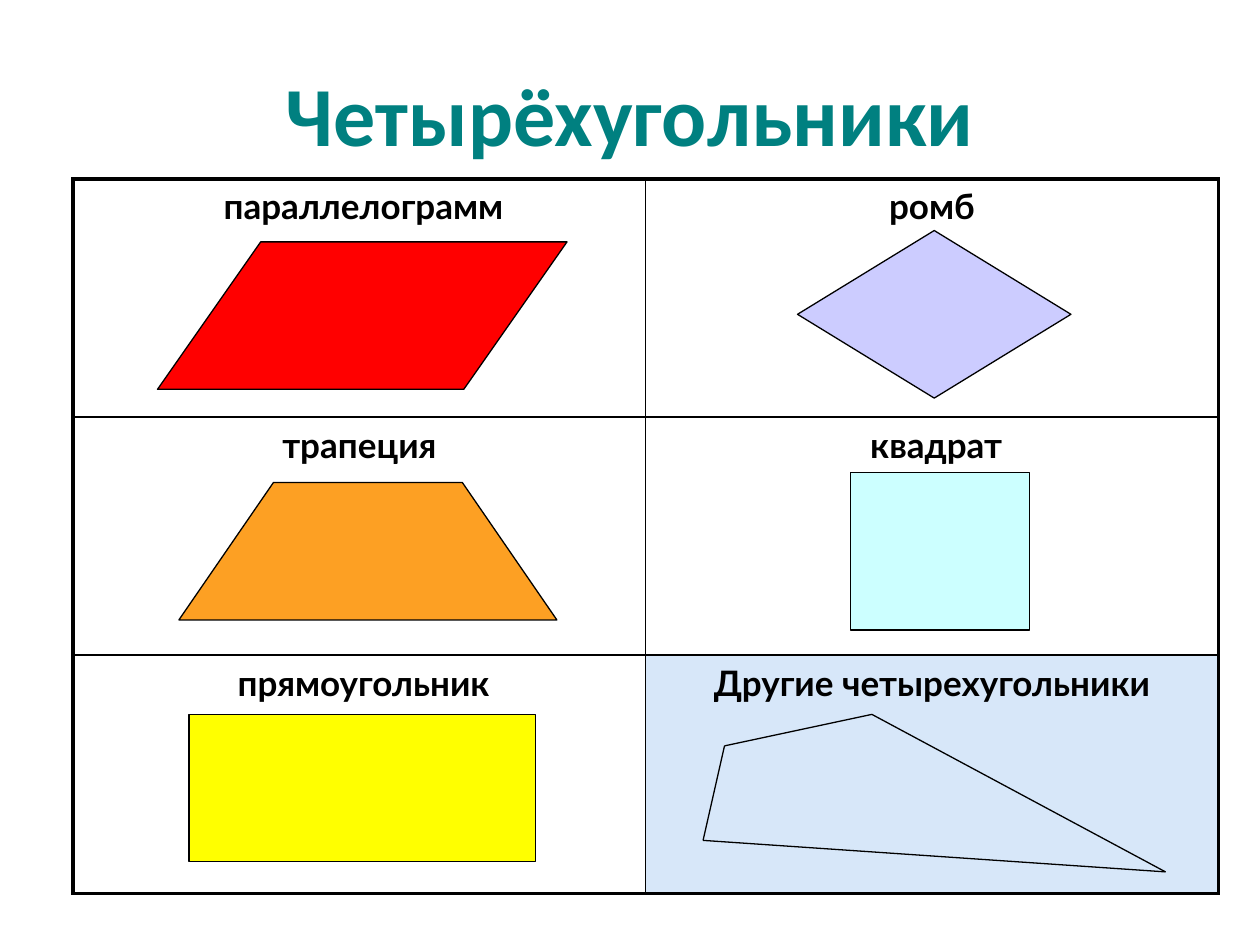
from lxml import etree
from pptx import Presentation
from pptx.dml.color import RGBColor
from pptx.enum.shapes import MSO_CONNECTOR, MSO_SHAPE
from pptx.enum.text import MSO_ANCHOR, PP_ALIGN
from pptx.oxml.ns import qn
from pptx.util import Inches, Pt

LINE = MSO_CONNECTOR.STRAIGHT
SLANT = MSO_SHAPE.PARALLELOGRAM
RECT = MSO_SHAPE.RECTANGLE
DIAMOND = MSO_SHAPE.DIAMOND
CENTER = PP_ALIGN.CENTER
MIDDLE = MSO_ANCHOR.MIDDLE

TITLE = "Четырёхугольники"
NAMES = [
    (" параллелограмм", "ромб"),
    ("трапеция", " квадрат"),
    (" прямоугольник", "Другие четырехугольники"),
]
TINTS = {"Другие четырехугольники": "D7E7F9"}
FIGURES = [
    (SLANT, (1.25, 1.92, 3.25, 1.17), "FF0000"),
    (RECT, (1.5, 5.67, 2.75, 1.17), "FFFF00"),
    (DIAMOND, (6.33, 1.83, 2.17, 1.33), "CCCCFF"),
    (RECT, (6.75, 3.75, 1.42, 1.25), "CCFFFF"),
]
TRAPEZOID = [(4.42, 4.92), (3.67, 3.83), (2.17, 3.83), (1.42, 4.92)]
OTHER = [(5.58, 6.67), (5.75, 5.92), (6.92, 5.67), (9.25, 6.92)]
BLACK = "000000"
THICK, THIN, EDGE = 2.25, 1, 0.75


def color(code):
    """Turn a hex string into a colour."""
    return RGBColor.from_string(code)


def style(part, size, face, code):
    """Centre a paragraph and set its bold font."""
    part.alignment = CENTER
    font = part.font
    font.size, font.name, font.bold = Pt(size), face, True
    font.color.rgb = color(code)


def outline(shape):
    """Give a shape or connector a thin black line."""
    shape.line.color.rgb = color(BLACK)
    shape.line.width = Pt(EDGE)


def paint(shape, code):
    """Fill and outline a shape without a shadow."""
    shape.shadow.inherit = False
    shape.fill.solid()
    shape.fill.fore_color.rgb = color(code)
    outline(shape)


def border(cell, widths):
    """Draw the four borders of a cell ahead of its fill."""
    props = cell._tc.get_or_add_tcPr()
    for spot, (side, width) in enumerate(zip("LRTB", widths)):
        line = etree.Element(qn(f"a:ln{side}"), w=str(Pt(width)))
        fill = etree.SubElement(line, qn("a:solidFill"))
        etree.SubElement(fill, qn("a:srgbClr"), val=BLACK)
        props.insert(spot, line)


def add_grid(shapes):
    """Add the table of names with a thick outer frame."""
    rows, cols = len(NAMES), len(NAMES[0])
    box = [Inches(n) for n in (0.58, 1.42, 9.09, 5.67)]
    table = shapes.add_table(rows, cols, *box).table
    table.first_row = table.horz_banding = False
    for r, names in enumerate(NAMES):
        for c, name in enumerate(names):
            cell = table.cell(r, c)
            cell.text = name
            part = cell.text_frame.paragraphs[0]
            style(part, 20, "Lato", BLACK)
            part.space_before = Pt(4)
            if name in TINTS:
                cell.fill.solid()
                cell.fill.fore_color.rgb = color(TINTS[name])
            else:
                cell.fill.background()
            outer = (c == 0, c == cols - 1, r == 0, r == rows - 1)
            border(cell, [THICK if out else THIN for out in outer])


def add_sides(shapes, points):
    """Join the points into a closed outline of connectors."""
    for start, end in zip(points, points[1:] + points[:1]):
        side = shapes.add_connector(LINE, *[Inches(n) for n in start + end])
        outline(side)
        etree.SubElement(side._element.spPr, qn("a:effectLst"))


def main():
    """Build the slide and save it."""
    deck = Presentation()
    deck.slide_width, deck.slide_height = Inches(10), Inches(7.5)
    shapes = deck.slides.add_slide(deck.slide_layouts[5]).shapes

    title = shapes.title
    title.left, title.top = Inches(0.5), Inches(0.42)
    title.width, title.height = Inches(9), Inches(0.95)
    title.text = TITLE
    title.text_frame.vertical_anchor = MIDDLE
    style(title.text_frame.paragraphs[0], 48, "Calibri", "008080")

    add_grid(shapes)
    add_sides(shapes, OTHER)
    for kind, box, code in FIGURES:
        shape = shapes.add_shape(kind, *[Inches(n) for n in box])
        if kind == SLANT:
            shape.adjustments[0] = 0.7
        paint(shape, code)

    points = [(Inches(x), Inches(y)) for x, y in TRAPEZOID]
    builder = shapes.build_freeform(*points[0])
    builder.add_line_segments(points[1:])
    paint(builder.convert_to_shape(), "FDA023")
    deck.save("out.pptx")


if __name__ == "__main__":
    main()
